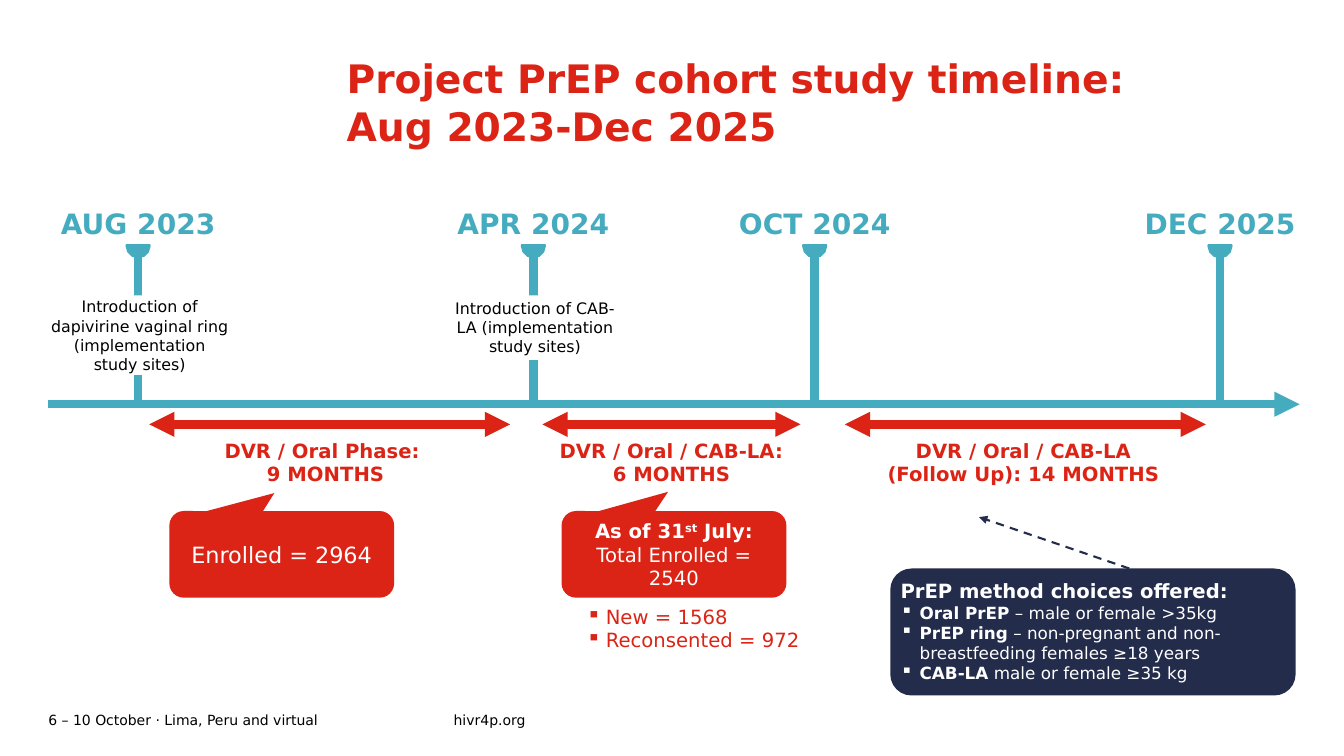
import pptx
import pptx.util
import pptx.dml.color
import pptx.enum.dml
import pptx.enum.shapes
import pptx.enum.text
import pptx.oxml.ns
from lxml import etree

Inches, Pt = pptx.util.Inches, pptx.util.Pt
SHAPES = pptx.enum.shapes.MSO_SHAPE
ALIGN = pptx.enum.text.PP_ALIGN
ANCHOR = pptx.enum.text.MSO_ANCHOR
qn = pptx.oxml.ns.qn

# Content
RED, TEAL, NAVY, WHITE, BLACK = "DB2415", "45ABBF", "242C4B", "FFFFFF", "000000"
FONT = "DejaVu Sans"

TITLE = "Project PrEP cohort study timeline: \nAug 2023-Dec 2025"
FOOTERS = [  # left, width, text
    (0.48, 4.02, "6 – 10 October · Lima, Peru and virtual"),
    (4.5, 1.93, "hivr4p.org"),
]
MILESTONES = [  # centre, date
    (1.37, "AUG 2023"),
    (5.29, "APR 2024"),
    (8.08, "OCT 2024"),
    (12.1, "DEC 2025"),
]
INTRODUCTIONS = [  # box, inset, lines
    ((0.5, 2.93, 1.77, 0.79), (0, 0),
     ["Introduction of", "dapivirine vaginal ring", "(implementation study sites)"]),
    ((4.42, 2.93, 1.77, 0.64), (0.07, 0.03),
     ["Introduction of CAB-LA (implementation study sites)"]),
]
PHASES = [  # arrow start, arrow end, label box, label lines
    (1.48, 5.06, (1.68, 4.35, 3.1, 0.47), ["DVR / Oral Phase: \n9 MONTHS"]),
    (5.38, 7.94, (5.16, 4.35, 3, 0.47), ["DVR / Oral / CAB-LA:", "6 MONTHS"]),
    (8.38, 11.96, (8.59, 4.36, 3.12, 0.45), ["DVR / Oral / CAB-LA (Follow Up): 14 MONTHS"]),
]
CALLOUTS = [  # left, tip offsets, inset, size, paragraphs of (text, bold, superscript) runs
    (1.68, (-0.033, -0.707), (0.1, 0.05), 16, [[("Enrolled = 2964", False, False)]]),
    (5.57, (-0.026, -0.722), (0.04, 0.04), 14, [
        [("As of 31", True, False), ("st", True, True), (" July:", True, False)],
        [("Total Enrolled = 2540", False, False)],
    ]),
]
ENROLMENT_SPLIT = ["New = 1568", "Reconsented = 972"]
CHOICES_HEADING = "PrEP method choices offered:"
CHOICES = [
    ("Oral PrEP", " – male or female >35kg"),
    ("PrEP ring", " – non-pregnant and non-breastfeeding females ≥18 years"),
    ("CAB-LA", " male or female ≥35 kg"),
]

AXIS_Y, PHASE_Y, STEM_TOP = 4.01, 4.21, 2.44
DATE_WIDTH, DATE_TOP, DATE_HEIGHT = 1.78, 2.02, 0.4

presentation = pptx.Presentation()
presentation.slide_width, presentation.slide_height = Inches(13.33), Inches(7.5)
slide = presentation.slides.add_slide(presentation.slide_layouts[6])


# Helpers
def colour(target, value):
    target.rgb = pptx.dml.color.RGBColor.from_string(value)


def prepare(shape, inset=(0.1, 0.05), anchor=ANCHOR.MIDDLE):
    frame = shape.text_frame
    frame.word_wrap = True
    frame.vertical_anchor = anchor
    frame.margin_left = frame.margin_right = Inches(inset[0])
    frame.margin_top = frame.margin_bottom = Inches(inset[1])
    return frame


def text_box(box, **layout):
    return prepare(slide.shapes.add_textbox(*map(Inches, box)), **layout)


def filled(kind, box, fill, adjustments=(), **layout):
    shape = slide.shapes.add_shape(kind, *map(Inches, box))
    shape.shadow.inherit = False
    shape.fill.solid()
    colour(shape.fill.fore_color, fill)
    shape.line.fill.background()
    for index, value in enumerate(adjustments):
        shape.adjustments[index] = value
    return prepare(shape, **layout)


def write(frame, runs, size=14, ink=RED, bold=False, align=ALIGN.LEFT, bullet=False):
    """Append one paragraph; runs is a string or a list of (text, bold, superscript)."""
    first = frame.paragraphs[0]
    paragraph = frame.add_paragraph() if first.runs else first
    paragraph.alignment = align
    if bullet:
        properties = paragraph._p.get_or_add_pPr()
        properties.set("marL", str(Inches(0.19)))
        properties.set("indent", str(-Inches(0.19)))
        etree.SubElement(properties, qn("a:buChar")).set("char", "▪")
    if isinstance(runs, str):
        runs = [(runs, bold, False)]
    for text, heavy, superscript in runs:
        for number, line in enumerate(text.split("\n")):
            if number:
                paragraph.add_line_break()
            run = paragraph.add_run()
            run.text = line
            run.font.name, run.font.size, run.font.bold = FONT, Pt(size), heavy
            colour(run.font.color, ink)
            if superscript:
                run._r.get_or_add_rPr().set("baseline", "30000")


def line(start, end, ink, width=6, head=None, tail="triangle", dashed=False):
    connector = slide.shapes.add_connector(
        pptx.enum.shapes.MSO_CONNECTOR.STRAIGHT, *map(Inches, start + end))
    colour(connector.line.color, ink)
    connector.line.width = Pt(width)
    if dashed:
        connector.line.dash_style = pptx.enum.dml.MSO_LINE.DASH
    outline = connector.line._get_or_add_ln()
    for tag, kind in (("a:headEnd", head), ("a:tailEnd", tail)):
        if kind:
            etree.SubElement(outline, qn(tag)).set("type", kind)
    etree.SubElement(connector._element.spPr, qn("a:effectLst"))


# Title and footer
write(text_box((3.34, 0.49, 9.63, 1.04)), TITLE, size=28, bold=True)
for left, width, footer in FOOTERS:
    write(text_box((left, 7.02, width, 0.24), inset=(0, 0)), footer, size=10, ink=BLACK)

# Time axis with milestones
line((0.48, AXIS_Y), (12.89, AXIS_Y), TEAL)
for centre, date in MILESTONES:
    line((centre, AXIS_Y - 0.02), (centre, STEM_TOP), TEAL, tail="oval")
    date_box = (centre - DATE_WIDTH / 2, DATE_TOP, DATE_WIDTH, DATE_HEIGHT)
    date_label = filled(SHAPES.RECTANGLE, date_box, WHITE,
                        inset=(0.07, 0.03), anchor=ANCHOR.TOP)
    write(date_label, date, size=20, ink=TEAL, bold=True, align=ALIGN.CENTER)
for box, inset, lines in INTRODUCTIONS:
    introduction = filled(SHAPES.RECTANGLE, box, WHITE, inset=inset)
    for words in lines:
        write(introduction, words, size=11.3, ink=BLACK, align=ALIGN.CENTER)

# Study phases
for start, end, box, lines in PHASES:
    line((start, PHASE_Y), (end, PHASE_Y), RED, head="triangle")
    phase = text_box(box)
    for words in lines:
        write(phase, words, bold=True, align=ALIGN.CENTER)

# Enrolment callouts
for left, tip, inset, size, paragraphs in CALLOUTS:
    callout = filled(SHAPES.ROUNDED_RECTANGULAR_CALLOUT, (left, 5.07, 2.23, 0.86), RED,
                     adjustments=(*tip, 0.167), inset=inset)
    for runs in paragraphs:
        write(callout, runs, size=size, ink=WHITE, align=ALIGN.CENTER)
split = text_box((5.72, 5.95, 2.37, 0.57), anchor=ANCHOR.TOP)
for words in ENROLMENT_SPLIT:
    write(split, words, bullet=True)

# Method choices
choices = filled(SHAPES.ROUNDED_RECTANGLE, (8.83, 5.64, 4.02, 1.26), NAVY,
                 adjustments=(0.167,), inset=(0.04, 0.04), anchor=ANCHOR.TOP)
write(choices, CHOICES_HEADING, ink=WHITE, bold=True)
for method, eligibility in CHOICES:
    write(choices, [(method, True, False), (eligibility, False, False)],
          size=12, ink=WHITE, bullet=True)
line((11.2, 5.64), (9.71, 5.13), NAVY, width=1.5, dashed=True)

presentation.save("out.pptx")
